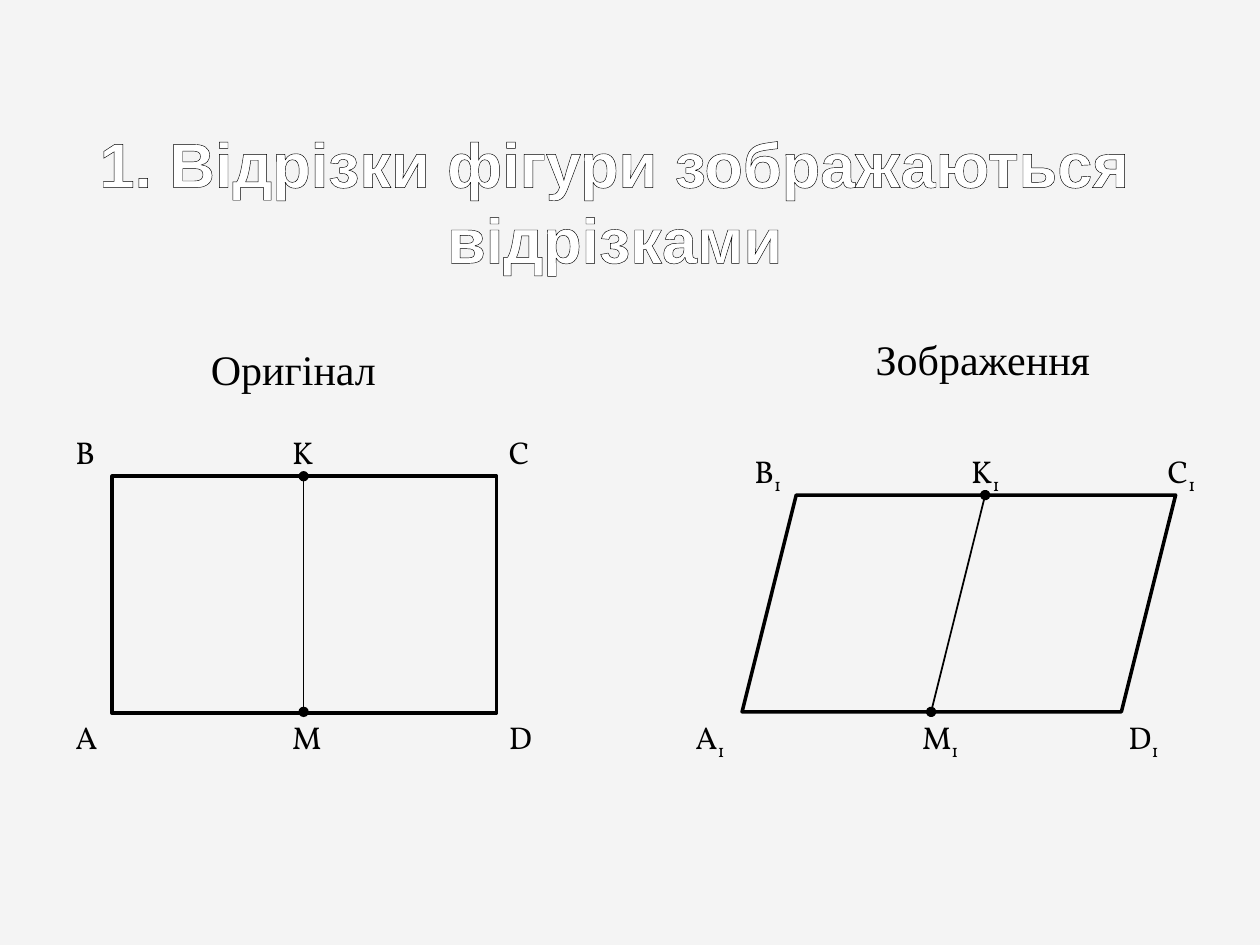
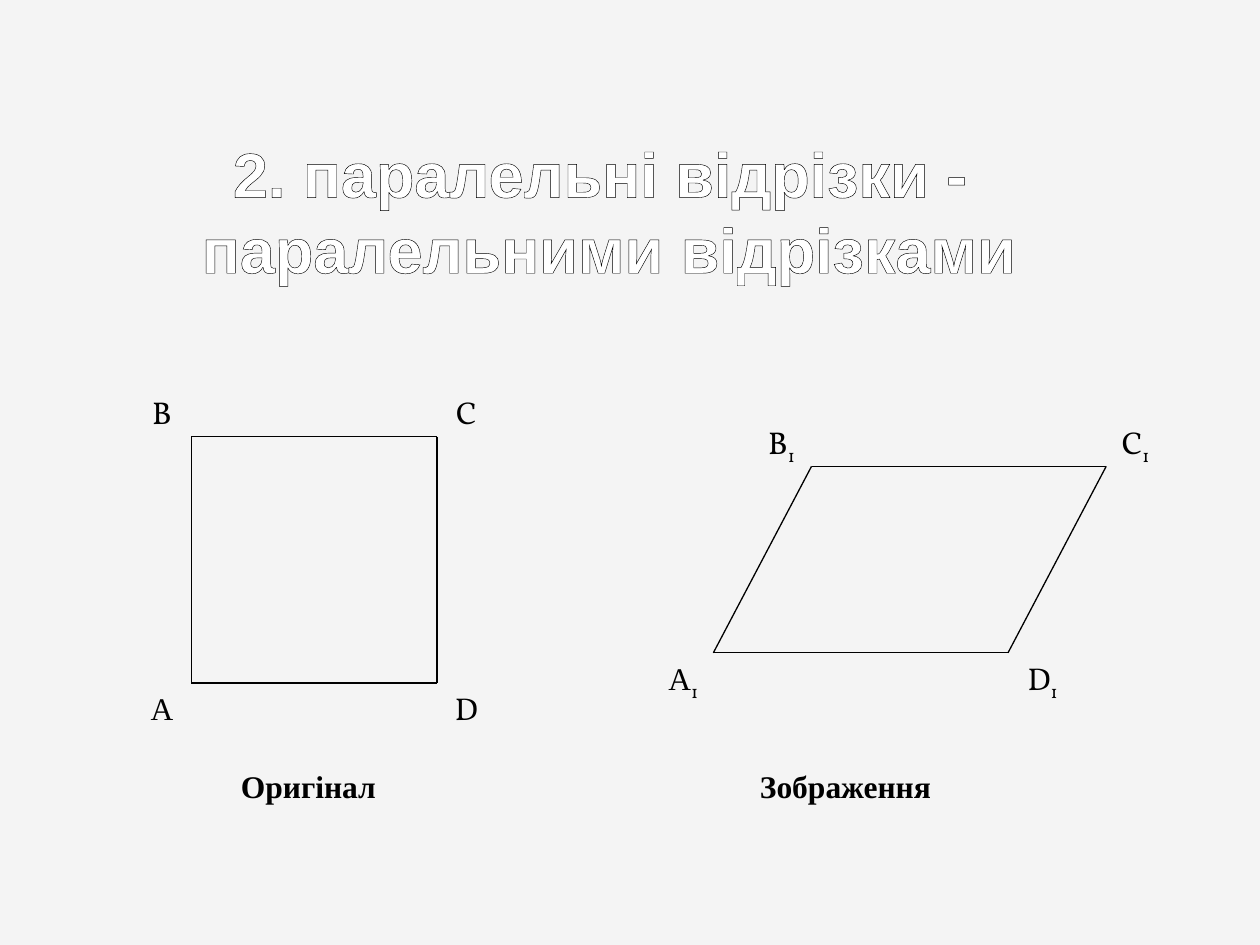
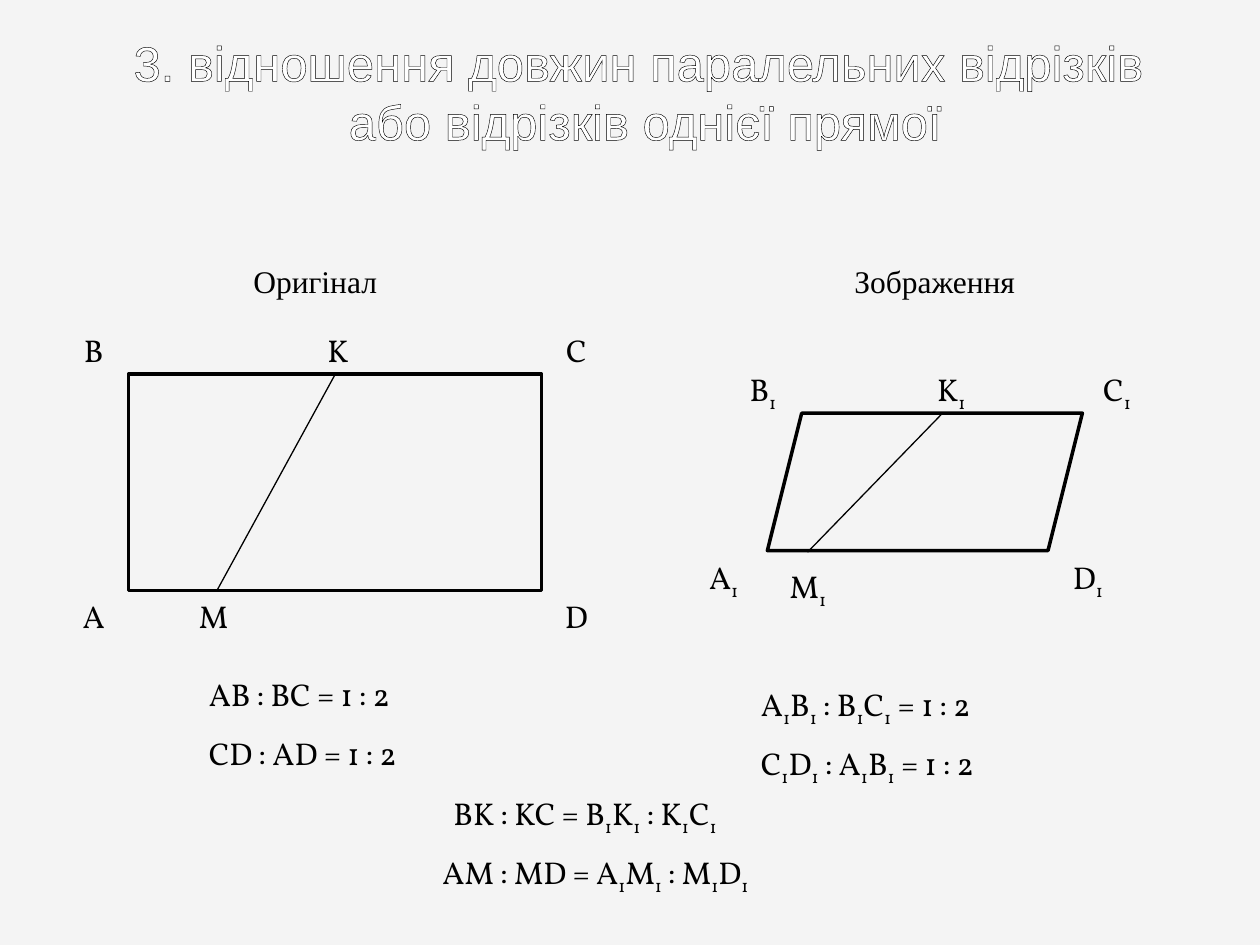
"""Build three slides on the properties of parallel projection."""
from lxml import etree
from pptx import Presentation, util as u
from pptx.dml.color import RGBColor
from pptx.enum import shapes, text
from pptx.oxml import ns

INK, WHITE, PAPER = "000000", "FFFFFF", "F4F4F4"
SERIF, SANS, LETTERS = "Times New Roman", "Arial", "Vollkorn"
LEFT, CENTER = text.PP_ALIGN.LEFT, text.PP_ALIGN.CENTER
LINE_HEIGHT = 1.02
rgb = RGBColor.from_string


def add_text(slide, content, x, y, width, height=LINE_HEIGHT, size=18, font=LETTERS,
             align=CENTER, bold=False, color=INK):
    """Add a text box; a character after "_" becomes a subscript."""
    frame = slide.shapes.add_textbox(u.Cm(x), u.Cm(y), u.Cm(width), u.Cm(height)).text_frame
    frame.word_wrap = True
    frame.auto_size = text.MSO_AUTO_SIZE.SHAPE_TO_FIT_TEXT
    for number, line in enumerate(content.split("\n")):
        paragraph = frame.add_paragraph() if number else frame.paragraphs[0]
        paragraph.alignment = align
        paragraph.font.size = u.Pt(size)
        paragraph.font.name = font
        paragraph.font.bold = bold
        paragraph.font.color.rgb = rgb(color)
        base, *indexed = line.split("_")
        paragraph.add_run().text = base
        for part in indexed:
            index = paragraph.add_run()
            index.text = part[0]
            index.font.name = LETTERS
            index._r.get_or_add_rPr().set("baseline", "-25000")
            if part[1:]:
                paragraph.add_run().text = part[1:]
    return frame


def add_segment(slide, start, end, width=0.75, dots=False):
    """Draw a straight segment, with dots at its ends if asked."""
    segment = slide.shapes.add_connector(
        shapes.MSO_CONNECTOR.STRAIGHT, *(u.Cm(value) for value in (*start, *end)))
    segment.line.color.rgb = rgb(INK)
    segment.line.width = u.Pt(width)
    etree.SubElement(segment._element.spPr, ns.qn("a:effectLst"))
    if dots:
        for end_tag in ("a:headEnd", "a:tailEnd"):
            etree.SubElement(segment.line._get_or_add_ln(), ns.qn(end_tag), type="oval")


RECTANGLE = shapes.MSO_SHAPE.RECTANGLE
PARALLELOGRAM = shapes.MSO_SHAPE.PARALLELOGRAM

properties = [
    {
        "title": ("1. Відрізки фігури зображаються\nвідрізками", 1.98, 2.39, 20.83, 2.97),
        "title_size": 36, "title_bold": True,
        "figures": [(RECTANGLE, 2.26, 9.6, 7.75, 4.78),
                    (PARALLELOGRAM, 14.96, 9.98, 8.74, 4.37)],
        "segments": [((6.12, 9.6), (6.12, 14.35)), ((19.86, 9.98), (18.77, 14.35))],
        "segment_width": 1, "dots": True,
        "captions": [("Оригінал", 2.84, 6.81, 6.15, 1.3),
                     ("Зображення", 16.74, 6.6, 6.15, 1.3)],
        "caption_size": 24, "caption_bold": False,
        "points": [],
        "left_texts": [("K", 5.64, 8.61, 1), ("M", 5.64, 14.35, 1), ("A", 1.27, 14.35, 1),
                       ("B", 1.27, 8.61, 1), ("C", 10.01, 8.61, 1), ("D", 10.01, 14.35, 1),
                       ("B_1", 14.96, 8.99, 1.4), ("A_1", 13.77, 14.35, 1.57),
                       ("D_1", 22.5, 14.35, 1.4), ("C_1", 23.29, 8.99, 1.57),
                       ("K_1", 19.33, 8.99, 1.19), ("M_1", 18.34, 14.35, 1.4)],
    },
    {
        "title": ("2. паралельні відрізки - \nпаралельними відрізками", 1.98, 2.59, 20.6, 3.35),
        "title_size": 36, "title_bold": True,
        "figures": [],
        "segments": [
            (corners[side - 1], corners[side])
            for corners in (((3.86, 13.77), (3.86, 8.8), (8.81, 8.8), (8.81, 13.77)),
                            ((14.38, 13.16), (16.36, 9.4), (22.3, 9.4), (20.32, 13.16)))
            for side in range(4)],
        "segment_width": 0.75, "dots": False,
        "captions": [("Оригінал", 4.24, 15.34, 3.96, LINE_HEIGHT),
                     ("Зображення", 14.76, 15.34, 4.57, LINE_HEIGHT)],
        "caption_size": 18, "caption_bold": True,
        "points": [("А", 2.67, 13.77, 1.19), ("B", 2.67, 7.8, 1.19),
                   ("C", 8.81, 7.8, 1.19), ("D", 8.81, 13.77, 1.19),
                   ("А_1", 13.18, 13.16, 1.19), ("B_1", 15.16, 8.41, 1.19),
                   ("C_1", 22.3, 8.41, 1.19), ("D_1", 20.32, 13.16, 1.4)],
        "left_texts": [],
    },
    {
        "title": ("3. відношення довжин паралельних відрізків \nабо відрізків однієї прямої",
                  1.5, 0.53, 23.01, 3.61),
        "title_size": 28, "title_bold": False,
        "figures": [(RECTANGLE, 2.59, 7.54, 8.33, 4.37),
                    (PARALLELOGRAM, 15.47, 8.33, 6.35, 2.77)],
        "segments": [((6.76, 7.54), (4.37, 11.91)), ((19, 8.33), (16.28, 11.13))],
        "segment_width": 0.75, "dots": False,
        "captions": [("Оригінал", 4.17, 5.16, 4.37, 1.12),
                     ("Зображення", 16.66, 5.16, 4.37, 1.12)],
        "caption_size": 18, "caption_bold": False,
        "points": [("C", 10.92, 6.55, 1.4), ("B", 1.19, 6.55, 1.4),
                   ("D", 10.92, 11.91, 1.4), ("A", 1.19, 11.91, 1.4),
                   ("C_1", 21.82, 7.34, 1.4), ("B_1", 14.68, 7.34, 1.4),
                   ("D_1", 21.23, 11.13, 1.4), ("A_1", 13.89, 11.13, 1.4),
                   ("BK : KC = B_1K_1 : K_1C_1", 8.33, 15.88, 6.93),
                   ("AM : MD = A_1M_1 : M_1D_1", 8.13, 17.07, 7.75)],
        "left_texts": [("K", 6.35, 6.55, 0.79), ("M", 3.76, 11.91, 0.79),
                       ("K_1", 18.64, 7.34, 1.19), ("M_1", 15.67, 11.3, 1.4),
                       ("AB : BC = 1 : 2", 3.96, 13.49, 6.93),
                       ("CD : AD = 1 : 2", 3.96, 14.68, 6.93),
                       ("A_1B_1 : B_1C_1 = 1 : 2", 15.09, 13.69, 6.93),
                       ("C_1D_1 : A_1B_1 = 1 : 2", 15.09, 14.88, 6.93)],
    },
]

deck = Presentation()
deck.slide_width, deck.slide_height = u.Cm(25.4), u.Cm(19.05)

for content in properties:
    slide = deck.slides.add_slide(deck.slide_layouts[6])
    slide.background.fill.solid()
    slide.background.fill.fore_color.rgb = rgb(PAPER)

    for outline, *place in content["figures"]:
        figure = slide.shapes.add_shape(outline, *(u.Cm(value) for value in place))
        figure.shadow.inherit = False
        figure.fill.background()
        figure.line.color.rgb = rgb(INK)
        figure.line.width = u.Pt(2)

    for start, end in content["segments"]:
        add_segment(slide, start, end, content["segment_width"], content["dots"])

    for caption in content["captions"]:
        add_text(slide, *caption, size=content["caption_size"], font=SERIF,
                 bold=content["caption_bold"])

    for point in content["points"]:
        add_text(slide, *point, font=SERIF if point[0][0] == "А" else LETTERS)

    for left_text in content["left_texts"]:
        add_text(slide, *left_text, align=LEFT)

    title = add_text(slide, *content["title"], size=content["title_size"], font=SANS,
                     bold=content["title_bold"], color=WHITE)
    title.word_wrap = False
    title.auto_size = text.MSO_AUTO_SIZE.NONE
    for paragraph in title.paragraphs:
        for run in paragraph.runs:
            contour = etree.Element(ns.qn("a:ln"), w=str(u.Pt(0.75)))
            ink = etree.SubElement(contour, ns.qn("a:solidFill"))
            etree.SubElement(ink, ns.qn("a:srgbClr"), val=INK)
            run._r.get_or_add_rPr().insert(0, contour)

deck.save("out.pptx")
